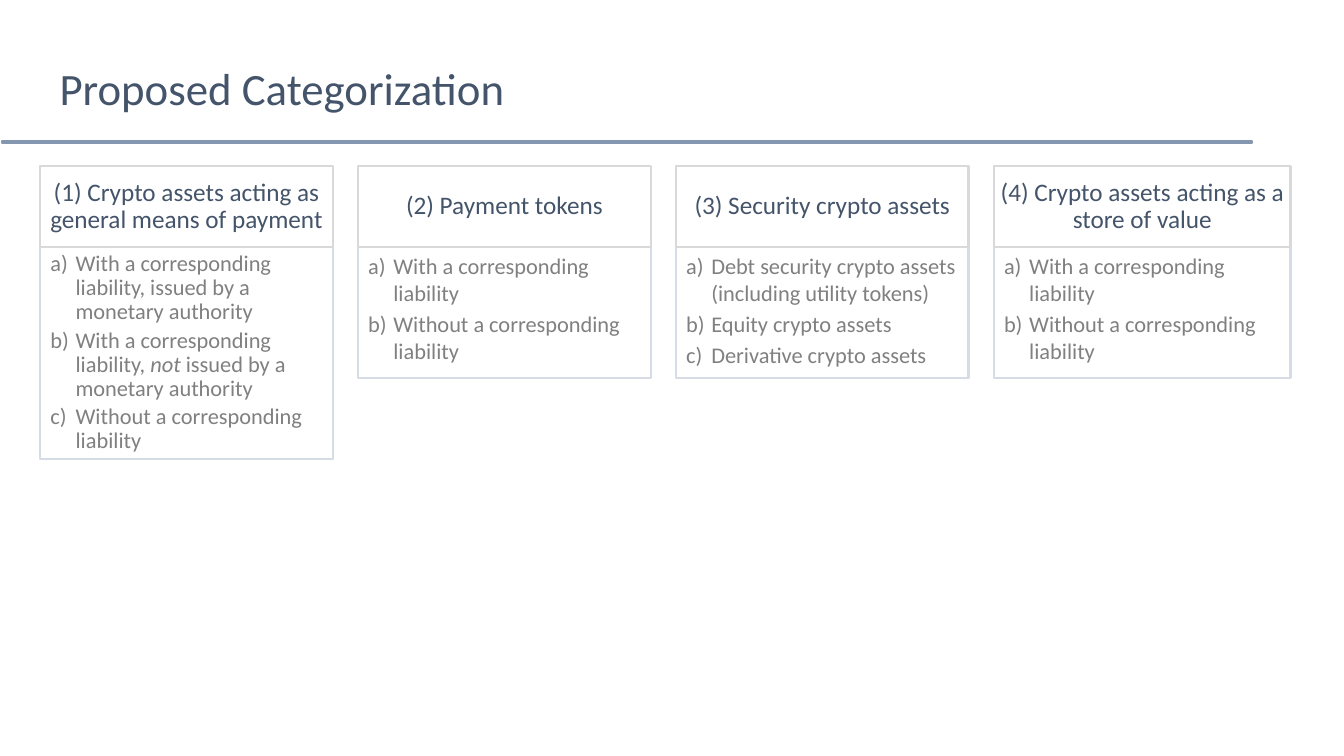
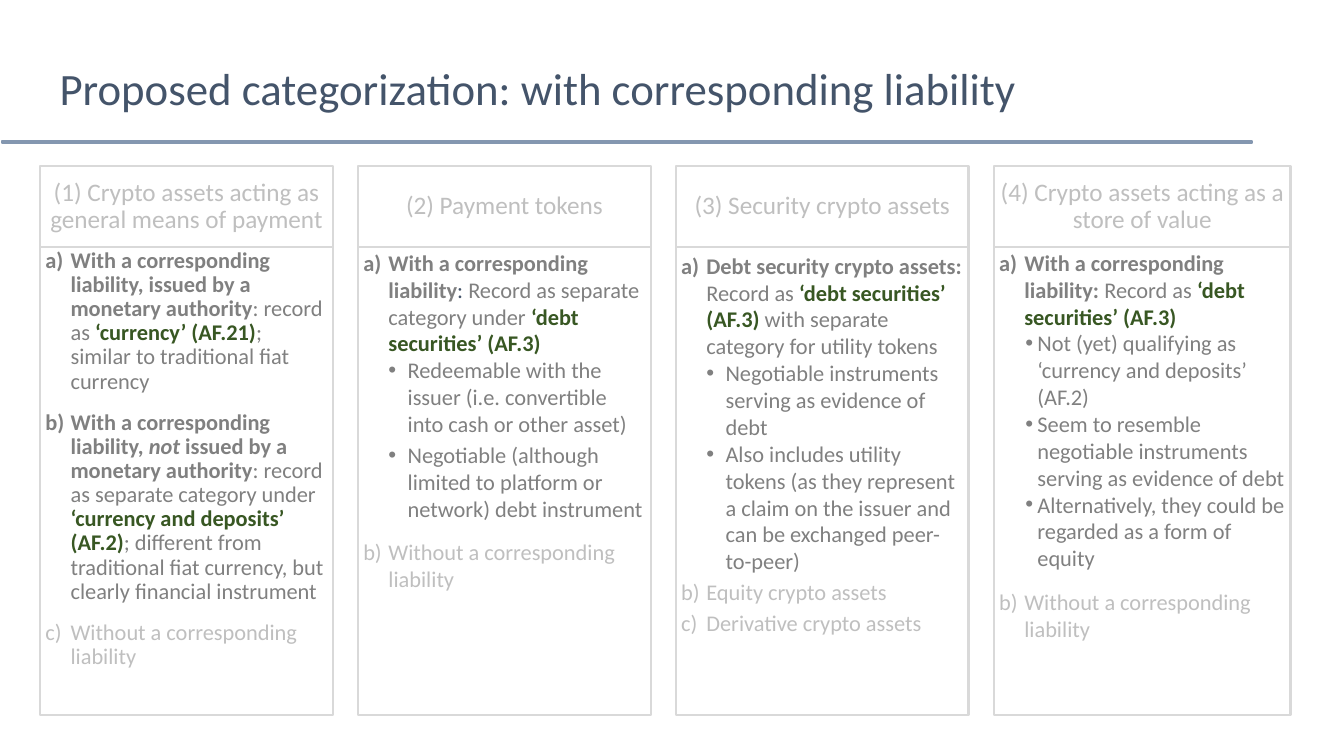
from lxml import etree
from pptx import Presentation
from pptx.dml.color import RGBColor
from pptx.enum.shapes import MSO_SHAPE
from pptx.enum.text import MSO_ANCHOR, MSO_AUTO_SIZE, PP_ALIGN
from pptx.oxml.ns import qn
from pptx.util import Inches, Pt

RECTANGLE = MSO_SHAPE.RECTANGLE
TOP, MIDDLE = MSO_ANCHOR.TOP, MSO_ANCHOR.MIDDLE
LEFT, CENTER = PP_ALIGN.LEFT, PP_ALIGN.CENTER
NO_AUTOFIT = MSO_AUTO_SIZE.NONE

FONT = "Calibri"
NAVY, GRAY, FADED, GREEN = "44546A", "808080", "BFBFBF", "385723"
RULE, BORDER, PALE_BORDER = "8497B0", "D9D9D9", "D6DCE5"

# Looks of a run: colour, bold, italic
LOOKS = {
    "navy": (NAVY, False, False),
    "plain": (GRAY, False, False),
    "italic": (GRAY, False, True),
    "bold": (GRAY, True, False),
    "bold italic": (GRAY, True, True),
    "code": (GREEN, True, False),
    "faded": (FADED, False, False),
}

# Kinds of list item: level, text margin, first-line indent
KINDS = {
    "letter": (0, 0.25, -0.25),
    "bullet": (1, 0.44, -0.19),
    "tight bullet": (1, 0.38, -0.12),
}

# Column grid, in inches
COLUMN_LEFT, COLUMN_STEP = 0.4, (9.86 - 0.4) / 3
COLUMN_WIDTHS = [2.9, 2.9, 2.9, 2.94]
HEADING_TOP, HEADING_HEIGHT = 1.65, 0.8
LIST_TOP = HEADING_TOP + HEADING_HEIGHT

HEADINGS = [
    "(1) Crypto assets acting as general means of payment",
    "(2) Payment tokens",
    "(3) Security crypto assets",
    "(4) Crypto assets acting as a store of value",
]

# A list item: kind, space before in points, runs of (text, look)
WITH_OR_WITHOUT = [
    ("letter", 3, [("With a corresponding liability", "plain")]),
    ("letter", 3, [("Without a corresponding liability", "plain")]),
]
WITHOUT_FADED = ("letter", 12, [("Without a corresponding liability", "faded")])

OVERVIEW = [
    [
        ("letter", 3, [("With a corresponding liability, issued by a monetary authority", "plain")]),
        ("letter", 3, [("With a corresponding liability, ", "plain"), ("not", "italic"),
                       (" issued by a monetary authority", "plain")]),
        ("letter", 3, [("Without a corresponding liability", "plain")]),
    ],
    WITH_OR_WITHOUT,
    [
        ("letter", 3, [("Debt security crypto assets (including utility tokens)", "plain")]),
        ("letter", 3, [("Equity crypto assets", "plain")]),
        ("letter", 3, [("Derivative crypto assets", "plain")]),
    ],
    WITH_OR_WITHOUT,
]

WITH_LIABILITY = [
    [
        ("letter", 3, [("With a corresponding liability, issued by a monetary authority", "bold"),
                       (": record as ", "plain"), ("‘currency’ (AF.21)", "code"),
                       ("; similar to traditional fiat currency", "plain")]),
        ("letter", 12, [("With a corresponding liability, ", "bold"), ("not", "bold italic"),
                        (" issued by a monetary authority", "bold"),
                        (": record as separate category under ", "plain"),
                        ("‘currency and deposits’ (AF.2)", "code"),
                        ("; different from traditional fiat currency, "
                         "but clearly financial instrument", "plain")]),
        WITHOUT_FADED,
    ],
    [
        ("letter", 12, [("With a corresponding liability", "bold"), (": ", "navy"),
                        ("Record as separate category under ", "plain"),
                        ("‘debt securities’ (AF.3)", "code")]),
        ("bullet", 0, [("Redeemable with the issuer (i.e. convertible into cash or other asset)", "plain")]),
        ("bullet", 3, [("Negotiable (although limited to platform or network) debt instrument", "plain")]),
        WITHOUT_FADED,
    ],
    [
        ("letter", 3, [("Debt security crypto assets: ", "bold"), ("Record as ", "plain"),
                       ("‘debt securities’ (AF.3) ", "code"),
                       ("with separate category for utility tokens", "plain")]),
        ("bullet", 0, [("Negotiable instruments serving as evidence of debt", "plain")]),
        ("bullet", 0, [("Also includes utility tokens (as they represent a claim on the issuer "
                        "and can be exchanged peer-to-peer)", "plain")]),
        ("letter", 3, [("Equity crypto assets", "faded")]),
        ("letter", 3, [("Derivative crypto assets", "faded")]),
    ],
    [
        ("letter", 0, [("With a corresponding liability: ", "bold"), ("Record as ", "plain"),
                       ("‘debt securities’ (AF.3)", "code")]),
        ("tight bullet", 0, [("Not (yet) qualifying as ‘currency and deposits’ (AF.2)", "plain")]),
        ("tight bullet", 0, [("Seem to resemble negotiable instruments serving as evidence of debt", "plain")]),
        ("tight bullet", 0, [("Alternatively, they could be regarded as a form of equity", "plain")]),
        WITHOUT_FADED,
    ],
]

# Title, heading look, list border, list heights, list insets (side, top and bottom), lists
SLIDES = [
    ("Proposed Categorization", "navy", PALE_BORDER,
     [2.1, 1.3, 1.3, 1.3], [(0.1, 0.05)] * 4, OVERVIEW),
    ("Proposed categorization: with corresponding liability", "faded", BORDER,
     [4.64] * 4, [(0.05, 0.02), (0.05, 0.02), (0.05, 0.05), (0.05, 0.02)], WITH_LIABILITY),
]


def write(para, runs, size, align, spacing, before):
    """Fill a paragraph with runs of (text, look)."""
    para.alignment = align
    para.line_spacing = spacing
    para.space_before, para.space_after = Pt(before), Pt(0)
    for text, look in runs:
        color, bold, italic = LOOKS[look]
        span = para.add_run()
        span.text = text
        span.font.name, span.font.size = FONT, Pt(size)
        span.font.bold, span.font.italic = bold, italic
        span.font.color.rgb = RGBColor.from_string(color)


def frame_box(box, border, anchor, side, edge):
    """Outline a box without fill and return its text frame, set up for wrapped text."""
    box.fill.background()
    box.line.color.rgb = RGBColor.from_string(border)
    box.line.width = Pt(1.5)
    box.shadow.inherit = False
    frame = box.text_frame
    frame.word_wrap, frame.auto_size = True, NO_AUTOFIT
    frame.vertical_anchor = anchor
    frame.margin_left = frame.margin_right = Inches(side)
    frame.margin_top = frame.margin_bottom = Inches(edge)
    return frame


deck = Presentation()
deck.slide_width, deck.slide_height = Inches(13.33), Inches(7.5)
title_and_content = deck.slide_layouts[1]

for title_text, heading_look, list_border, heights, insets, lists in SLIDES:
    slide = deck.slides.add_slide(title_and_content)

    title = slide.shapes.title
    title.left, title.top = Inches(0.49), Inches(0.4)
    title.width, title.height = Inches(11.92), Inches(1.01)
    title.text_frame.auto_size = NO_AUTOFIT
    title.text_frame.vertical_anchor = MIDDLE
    write(title.text_frame.paragraphs[0], [(title_text, "navy")], 32, LEFT, 0.9, 0)

    rule = slide.shapes.add_shape(RECTANGLE, Inches(0.02), Inches(1.4), Inches(12.4), Inches(0.02))
    rule.fill.solid()
    rule.fill.fore_color.rgb = rule.line.color.rgb = RGBColor.from_string(RULE)
    rule.line.width = Pt(1)
    rule.shadow.inherit = False

    for column, items in enumerate(lists):
        left = Inches(COLUMN_LEFT + column * COLUMN_STEP)
        width = Inches(COLUMN_WIDTHS[column])
        place = left, Inches(LIST_TOP), width, Inches(heights[column])
        if column == 0:
            list_box = slide.placeholders[1]
            list_box.left, list_box.top, list_box.width, list_box.height = place
        else:
            list_box = slide.shapes.add_shape(RECTANGLE, *place)
        frame = frame_box(list_box, list_border, TOP, *insets[column])
        for number, (kind, before, runs) in enumerate(items):
            para = frame.add_paragraph() if number else frame.paragraphs[0]
            write(para, runs, 16, LEFT, 1.0 if column else 0.9, before)
            level, margin, indent = KINDS[kind]
            para.level = level
            properties = para._p.get_or_add_pPr()
            properties.set("marL", str(Inches(margin)))
            properties.set("indent", str(Inches(indent)))
            if kind == "letter":
                etree.SubElement(properties, qn("a:buFont"), typeface="+mj-lt")
                etree.SubElement(properties, qn("a:buAutoNum"), type="alphaLcParenR")
            else:
                etree.SubElement(properties, qn("a:buFont"), typeface="Arial")
                etree.SubElement(properties, qn("a:buChar"), char="•")

        heading = slide.shapes.add_shape(RECTANGLE, left, Inches(HEADING_TOP), width, Inches(HEADING_HEIGHT))
        frame = frame_box(heading, BORDER, MIDDLE, 0.05, 0)
        write(frame.paragraphs[0], [(HEADINGS[column], heading_look)], 18, CENTER, 0.9, 10)

deck.save("out.pptx")
